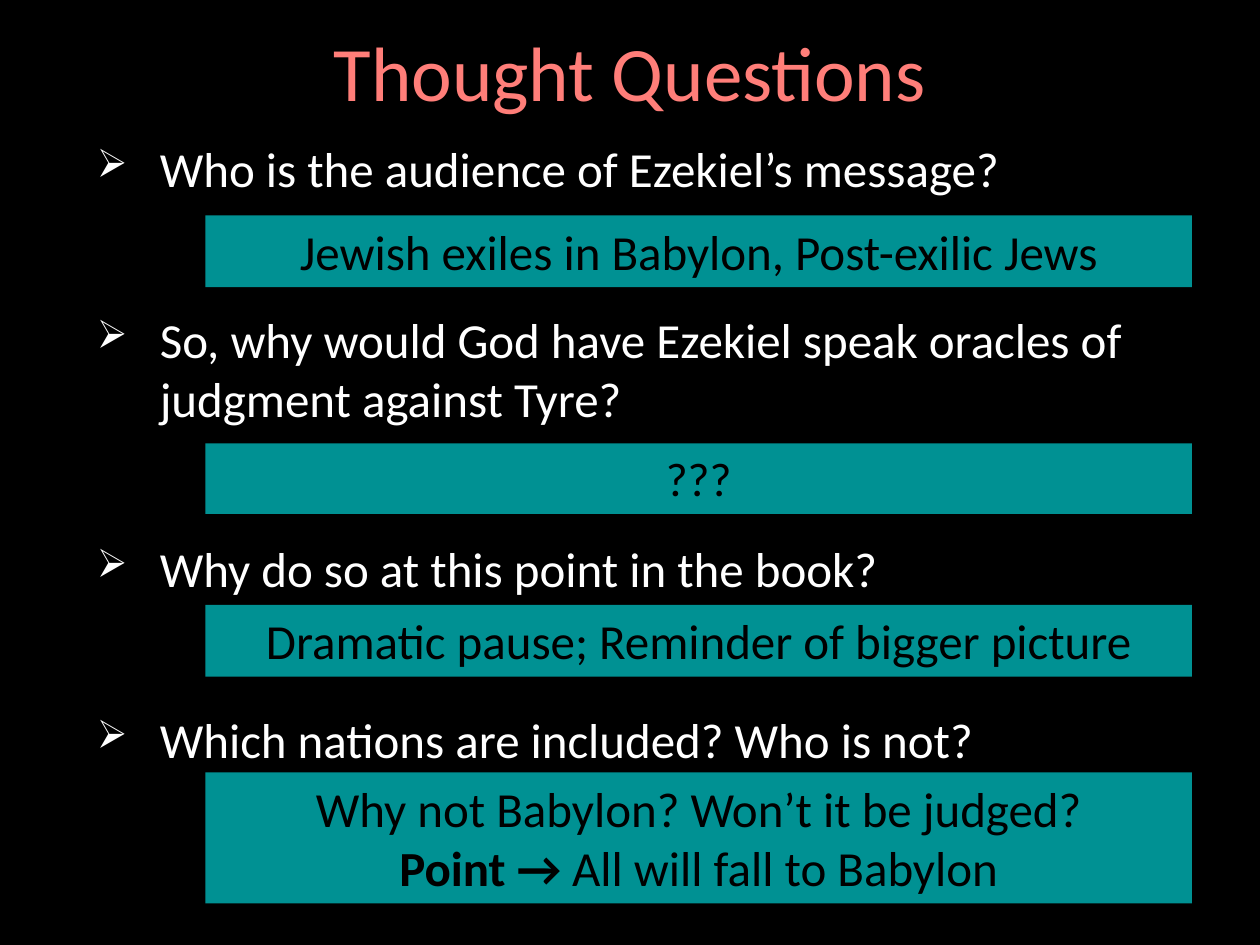
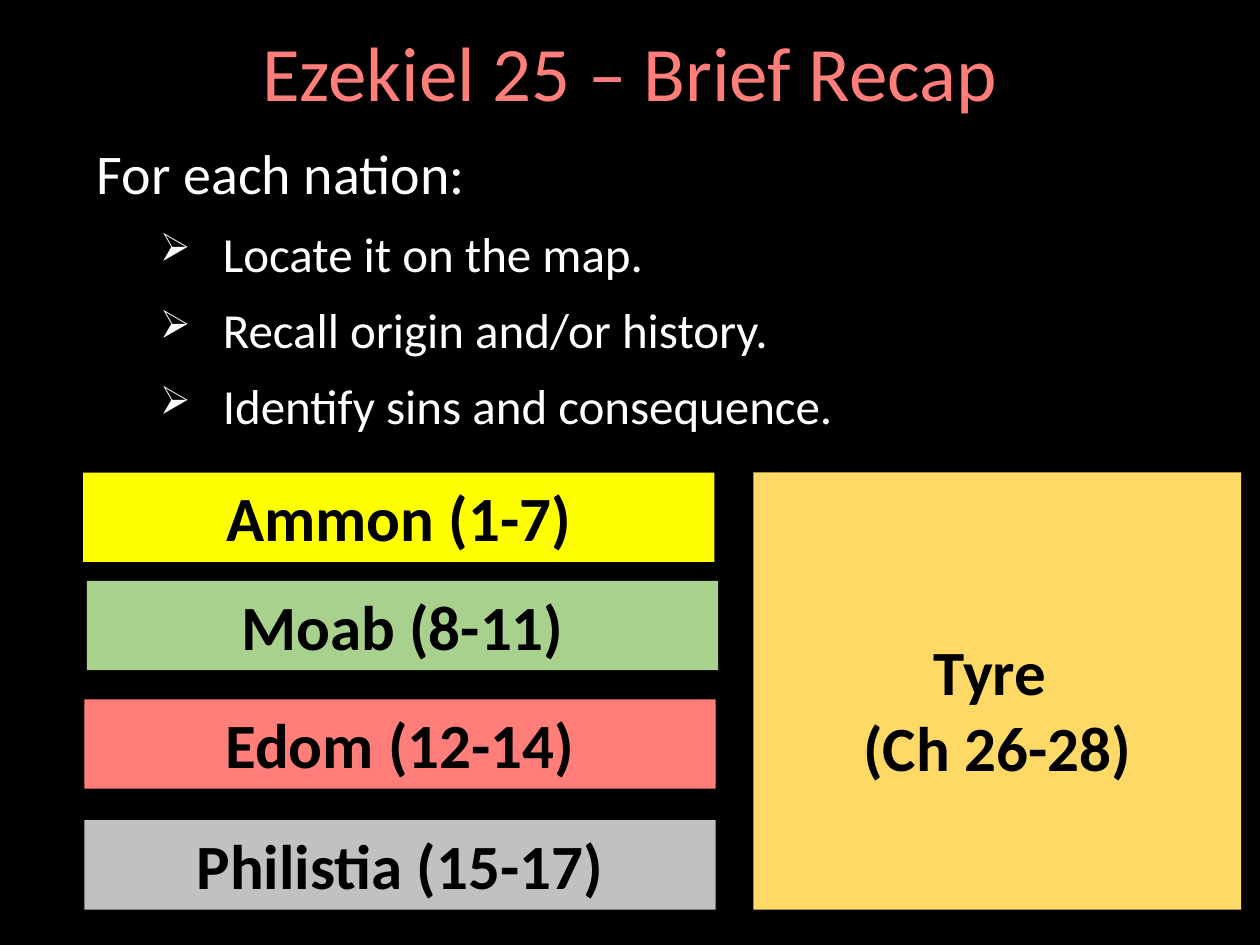
from lxml import etree
from pptx import Presentation
from pptx.dml.color import RGBColor
from pptx.enum.shapes import MSO_SHAPE as Shape
from pptx.enum.text import MSO_ANCHOR as Anchor, MSO_AUTO_SIZE as AutoSize, PP_ALIGN as Align
from pptx.oxml.ns import qn
from pptx.util import Inches, Pt

FONT = "Calibri"
BLACK = RGBColor(0x00, 0x00, 0x00)
WHITE = RGBColor(0xFF, 0xFF, 0xFF)
CORAL = RGBColor(0xFF, 0x7E, 0x79)
TEAL = RGBColor(0x00, 0x91, 0x93)
YELLOW = RGBColor(0xFF, 0xFF, 0x00)
GREEN = RGBColor(0xA9, 0xD1, 0x8E)
SILVER = RGBColor(0xC1, 0xC1, 0xC1)
GOLD = RGBColor(0xFF, 0xD9, 0x66)

TITLE_BOX = (0.69, 0.16, 8.62, 0.9)
BODY_BOX = (0.67, 1.05, 8.62, 5.73)


def style(paragraph, size, color, bold=False):
    font = paragraph.font
    font.name, font.size, font.bold = FONT, Pt(size), bold
    font.color.rgb = color


def add_bullet(paragraph, indent):
    props = paragraph._p.get_or_add_pPr()
    props.set("marL", str(Inches(indent)))
    props.set("indent", str(Inches(-0.5)))
    etree.SubElement(props, qn("a:buSzPct")).set("val", "80000")
    etree.SubElement(props, qn("a:buChar")).set("char", "➢")


def add_titled_slide(prs, title_text):
    slide = prs.slides.add_slide(prs.slide_layouts[5])
    title = slide.shapes.title
    title.left, title.top, title.width, title.height = map(Inches, TITLE_BOX)
    frame = title.text_frame
    frame.text = title_text
    frame.auto_size = AutoSize.NONE
    frame.vertical_anchor = Anchor.MIDDLE
    heading = frame.paragraphs[0]
    heading.alignment = Align.CENTER
    heading.line_spacing = 0.9
    style(heading, 44, CORAL)
    return slide


def add_body(slide, box, lines, space_after):
    """Each line is (text, size, bullet indent or None)."""
    frame = slide.shapes.add_textbox(*map(Inches, box)).text_frame
    frame.word_wrap = True
    for i, (text, size, indent) in enumerate(lines):
        paragraph = frame.add_paragraph() if i else frame.paragraphs[0]
        paragraph.text = text
        if indent:
            add_bullet(paragraph, indent)
        paragraph.space_before = Pt(4 if i else 0)
        paragraph.space_after = Pt(space_after)
        style(paragraph, size, WHITE)


def add_panel(slide, box, fill, lines, size, bold=False, inset=0.05):
    """Each line is a list of (text, bold) runs or a plain string."""
    panel = slide.shapes.add_shape(Shape.RECTANGLE, *map(Inches, box))
    panel.shadow.inherit = False
    panel.fill.solid()
    panel.fill.fore_color.rgb = fill
    panel.line.fill.background()
    frame = panel.text_frame
    frame.word_wrap = True
    frame.vertical_anchor = Anchor.TOP
    frame.margin_top = Inches(inset)
    for i, line in enumerate(lines):
        paragraph = frame.add_paragraph() if i else frame.paragraphs[0]
        paragraph.alignment = Align.CENTER
        style(paragraph, size, BLACK, bold)
        if isinstance(line, str):
            paragraph.text = line
        else:
            for text, run_bold in line:
                run = paragraph.add_run()
                run.text, run.font.bold = text, run_bold


def build_questions(prs):
    slide = add_titled_slide(prs, "Thought Questions")
    questions = [
        "Who is the audience of Ezekiel’s message?",
        "So, why would God have Ezekiel speak oracles of judgment against Tyre?",
        "Why do so at this point in the book?",
        "Which nations are included? Who is not?",
    ]
    add_body(slide, BODY_BOX, [(question, 28, 0.5) for question in questions], 60)

    # Answers: top, height, size, lines
    answers = [
        (1.71, 0.57, 28, ["Jewish exiles in Babylon, Post-exilic Jews"]),
        (3.52, 0.56, 27, ["???"]),
        (4.8, 0.57, 28, ["Dramatic pause; Reminder of bigger picture"]),
        (6.13, 1.04, 28, ["Why not Babylon? Won’t it be judged?",
                          [("Point →", True), (" All will fall to Babylon", False)]]),
    ]
    for top, height, size, lines in answers:
        add_panel(slide, (1.63, top, 7.83, height), TEAL, lines, size)


def build_recap(prs):
    slide = add_titled_slide(prs, "Ezekiel 25 – Brief Recap")
    tasks = ["Locate it on the map.", "Recall origin and/or history.",
             "Identify sins and consequence."]
    add_body(slide, BODY_BOX,
             [("For each nation:", 32, None)] + [(task, 28, 1) for task in tasks], 6)

    # Nations of chapter 25
    nations = [
        (0.66, 3.75, YELLOW, "Ammon (1-7)"),
        (0.69, 4.61, GREEN, "Moab (8-11)"),
        (0.67, 5.55, CORAL, "Edom (12-14)"),
        (0.67, 6.51, SILVER, "Philistia (15-17)"),
    ]
    for left, top, fill, nation in nations:
        add_panel(slide, (left, top, 5.01, 0.71), fill, [nation], 36, bold=True)

    # Tyre, beside all four
    add_panel(slide, (5.98, 3.75, 3.87, 3.47), GOLD, ["Tyre ", "(Ch 26-28)"], 36,
              bold=True, inset=1.27)


def main():
    prs = Presentation()
    prs.slide_width, prs.slide_height = Inches(10), Inches(7.5)
    backdrop = prs.slide_master.background.fill
    backdrop.solid()
    backdrop.fore_color.rgb = BLACK
    build_questions(prs)
    build_recap(prs)
    prs.save("out.pptx")


if __name__ == "__main__":
    main()
